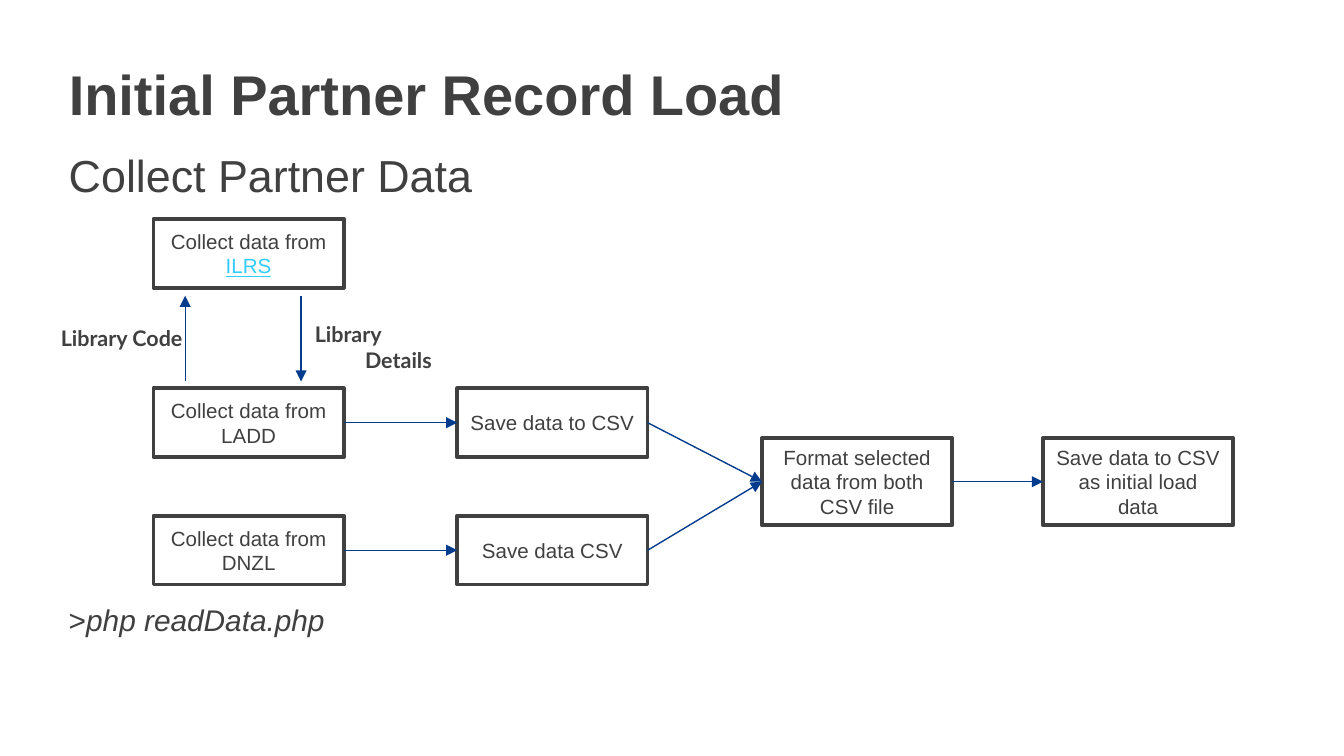
from lxml.etree import SubElement
from pptx import Presentation
from pptx.dml.color import RGBColor
from pptx.enum.shapes import MSO_CONNECTOR, MSO_SHAPE
from pptx.enum.text import MSO_ANCHOR, PP_ALIGN
from pptx.oxml.ns import qn
from pptx.util import Cm, Pt

INK, PAPER, ARROW, LINK = "404040", "FFFFFF", "033C8D", "33CCFF"
LEFT, BOX_WIDTH = 1.3, 3.6
TOP, LEFT_SIDE, BOTTOM, RIGHT_SIDE = range(4)
COLUMNS = [2.9, 8.64, 14.4, 19.71]
ROWS = {"ilrs": 4.14, "ladd": 7.34, "dnzl": 9.75, "merge": 8.28}
HEADING = {"name": "Arial", "size": Pt(30), "bold": True}
SUBHEADING = {"name": "Arial", "size": Pt(24)}
COMMAND = {"name": "Arial", "size": Pt(16)}
STEP = {"name": "Arial", "size": Pt(11)}
LABEL = {"name": "Lato", "size": Pt(11.5), "bold": True}
NO_MARGINS = {"margin_left": 0, "margin_right": 0, "margin_top": 0, "margin_bottom": 0}


def color(value):
    """Turn a hex string into a colour."""
    return RGBColor.from_string(value)


def apply(target, values):
    """Set attributes from a dict."""
    for name, value in values.items():
        setattr(target, name, value)


def place(shape, left, top, width, height):
    """Move and size a shape, in centimetres."""
    apply(shape, {"left": Cm(left), "top": Cm(top), "width": Cm(width), "height": Cm(height)})


def add_span(para, text, style, hue=INK):
    """Append a formatted run and return it."""
    span = para.add_run()
    span.text = text
    apply(span.font, style)
    span.font.color.rgb = color(hue)
    return span


def add_title(page, text):
    """Fill the title placeholder."""
    title = page.shapes.title
    place(title, LEFT, 1.12, 22.86, 1.3)
    apply(title.text_frame, {**NO_MARGINS, "vertical_anchor": MSO_ANCHOR.TOP, "word_wrap": True})
    para = title.text_frame.paragraphs[0]
    para.alignment = PP_ALIGN.LEFT
    add_span(para, text, HEADING)


def add_text(page, frame, margins):
    """Add a wrapping text box and return its first paragraph."""
    box = page.shapes.add_textbox(*map(Cm, frame))
    apply(box.text_frame, {**margins, "word_wrap": True})
    return box.text_frame.paragraphs[0]


def add_label(page, text, left, top, width):
    """Add an arrow label with a hanging indent."""
    para = add_text(page, (left, top, width, 0.76), {})
    properties = para._p.get_or_add_pPr()
    properties.set("marL", str(Cm(0.95)))
    properties.set("indent", str(-Cm(0.95)))
    add_span(para, text, LABEL)


def add_step(page, text, column, row, height=1.3, linked=""):
    """Add an outlined process box."""
    box = page.shapes.add_shape(
        MSO_SHAPE.RECTANGLE, Cm(COLUMNS[column]), Cm(ROWS[row]), Cm(BOX_WIDTH), Cm(height))
    box.shadow.inherit = False
    box.fill.solid()
    box.fill.fore_color.rgb = color(PAPER)
    box.line.color.rgb = color(INK)
    box.line.width = Pt(2)
    apply(box.text_frame, {"word_wrap": True, "vertical_anchor": MSO_ANCHOR.MIDDLE})
    para = box.text_frame.paragraphs[0]
    para.alignment = PP_ALIGN.CENTER
    add_span(para, text, STEP)
    if linked:
        add_span(para, linked, {**STEP, "underline": True}, LINK)
    return box


def add_arrow(page, start=(0, 0), end=(0, 0)):
    """Add a straight arrow between two points."""
    arrow = page.shapes.add_connector(MSO_CONNECTOR.STRAIGHT, *map(Cm, (*start, *end)))
    arrow.line.color.rgb = color(ARROW)
    arrow.line.width = Pt(0.75)
    SubElement(arrow.line._get_or_add_ln(), qn("a:tailEnd"), type="triangle")
    SubElement(arrow._element.spPr, qn("a:effectLst"))
    return arrow


def link_steps(page, source, target):
    """Join the right side of one step to the left side of another."""
    arrow = add_arrow(page)
    arrow.begin_connect(source, RIGHT_SIDE)
    arrow.end_connect(target, LEFT_SIDE)


def main():
    """Build the slide."""
    deck = Presentation()
    apply(deck, {"slide_width": Cm(25.4), "slide_height": Cm(14.29)})
    page = deck.slides.add_slide(deck.slide_layouts[5])

    add_title(page, "Initial Partner Record Load")
    subheading = add_text(page, (LEFT, 2.8, 22.8, 1), NO_MARGINS)
    add_span(subheading, "Collect Partner Data", SUBHEADING)
    command = add_text(page, (LEFT, 11.38, 22.8, 0.7), NO_MARGINS)
    add_span(command, ">", COMMAND)
    add_span(command, "php readData.php", {**COMMAND, "italic": True})

    add_step(page, "Collect data from ", 0, "ilrs", linked="ILRS")
    ladd = add_step(page, "Collect data from LADD", 0, "ladd")
    dnzl = add_step(page, "Collect data from DNZL", 0, "dnzl")
    ladd_file = add_step(page, "Save data to CSV", 1, "ladd")
    dnzl_file = add_step(page, "Save data CSV", 1, "dnzl")
    merge = add_step(page, "Format selected data from both CSV file", 2, "merge", 1.65)
    result = add_step(page, "Save data to CSV as initial load data", 3, "merge", 1.65)

    add_arrow(page, (3.5, 7.21), (3.5, 5.59))
    add_arrow(page, (5.69, 5.59), (5.69, 7.21))
    add_label(page, "Library Code", 0.9, 6.02, 3)
    add_label(page, "Library Details", 5.7, 5.94, 3)
    for source, target in ((ladd, ladd_file), (dnzl, dnzl_file), (ladd_file, merge),
                           (dnzl_file, merge), (merge, result)):
        link_steps(page, source, target)

    deck.save("out.pptx")


if __name__ == "__main__":
    main()
